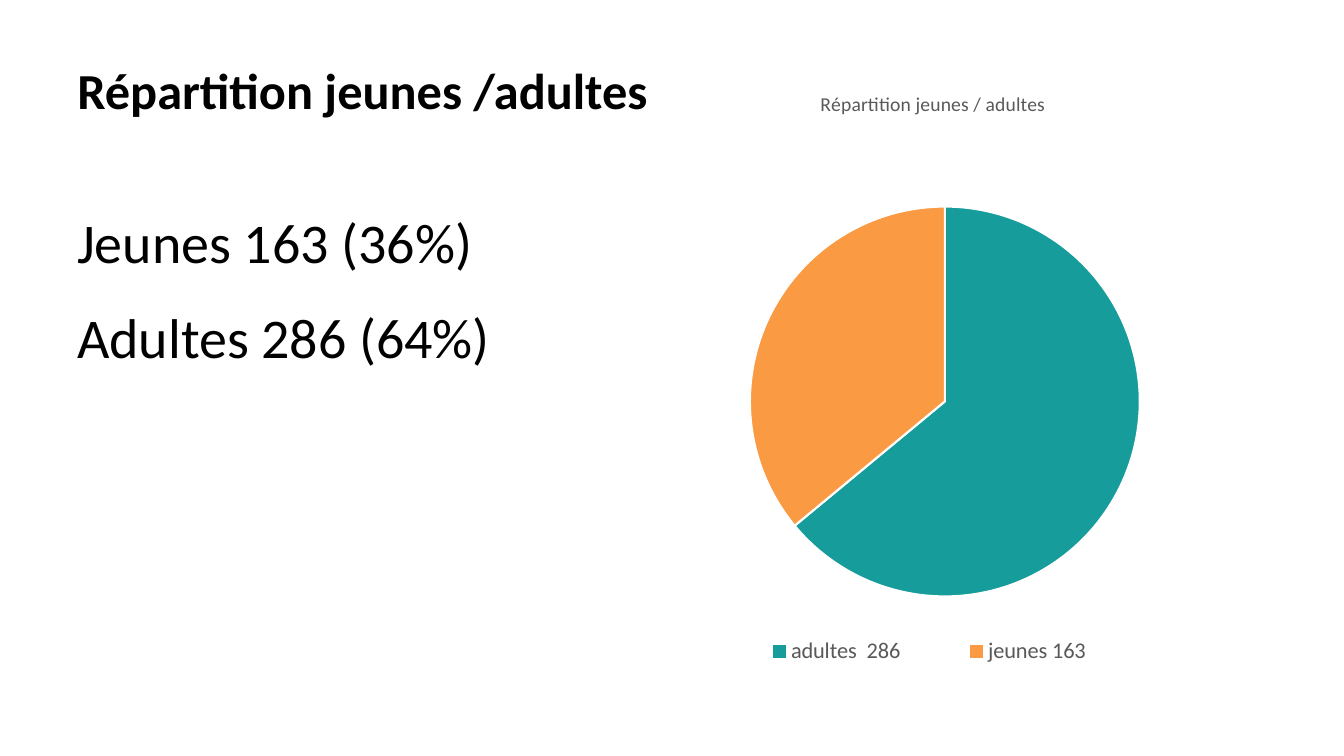
import pptx
import pptx.chart.data
import pptx.dml.color
import pptx.enum.chart
import pptx.enum.text
import pptx.oxml
import pptx.oxml.ns
import pptx.util

Pt = pptx.util.Pt

HEADING = "Répartition jeunes /adultes"
COUNTS = ["Jeunes 163 (36%)", "Adultes 286 (64%)"]
PIE_TITLE = "Répartition jeunes / adultes"
SLICES = [("adultes  286", 64, "adults"), ("jeunes 163", 36, "youths")]

COLOURS = {"text": "000000", "label": "595959", "edge": "FFFFFF",
           "adults": "169C9A", "youths": "FA9A42"}
SLIDE_SIZE = (960, 540)
LEFT, TOP, WIDTH = 48, 43.2, 838.8
HEADING_BOX = (LEFT, TOP, WIDTH, 89.3)
COUNTS_BOX = (LEFT, 135.4, WIDTH, 361.4)
PIE_BOX = (440.6, TOP, 446.4, 474.5)
# Fractions of the chart area: x, y, width, height
PLOT_LAYOUT = {"x": 0.109, "y": 0.22, "w": 0.832, "h": 0.587}
LEGEND_LAYOUT = {"x": 0.15, "y": 0.86, "w": 0.7, "h": 0.06}
TITLE_LAYOUT = {"x": 0.32, "y": 0.04}

HEADING_FONT = {"size": Pt(36), "bold": True}
COUNTS_FONT = {"size": Pt(40), "bold": False}
PIE_TITLE_FONT = {"size": Pt(14), "bold": False}
LEGEND_FONT = {"size": Pt(16), "bold": False}


def rgb(name):
    return pptx.dml.color.RGBColor.from_string(COLOURS[name])


def style_font(font, values, colour):
    for key, value in {"name": "Calibri", **values}.items():
        setattr(font, key, value)
    font.color.rgb = rgb(colour)


def place(shape, box):
    for key, value in zip(("left", "top", "width", "height"), box):
        setattr(shape, key, Pt(value))


def fill_text(frame, lines, font, spacing, before=0):
    frame.word_wrap = True
    frame.auto_size = pptx.enum.text.MSO_AUTO_SIZE.NONE
    frame.vertical_anchor = pptx.enum.text.MSO_ANCHOR.TOP
    frame.text = "\n".join(lines)
    for index, paragraph in enumerate(frame.paragraphs):
        paragraph.alignment = pptx.enum.text.PP_ALIGN.LEFT
        paragraph.line_spacing = spacing
        paragraph.space_before = Pt(before if index else 0)
        style_font(paragraph.font, font, "text")


def set_layout(parent, fractions, followers, inner=False):
    """Fix a chart part's place, putting c:layout before the follower tags."""
    for old in parent.findall(pptx.oxml.ns.qn("c:layout")):
        parent.remove(old)
    target = '<c:layoutTarget val="inner"/>' if inner else ""
    modes = "".join(f'<c:{key}Mode val="edge"/>' for key in ("x", "y"))
    sizes = "".join(f'<c:{key} val="{value}"/>' for key, value in fractions.items())
    layout = pptx.oxml.parse_xml(
        f'<c:layout {pptx.oxml.ns.nsdecls("c")}><c:manualLayout>'
        f'{target}{modes}{sizes}</c:manualLayout></c:layout>')
    tags = [pptx.oxml.ns.qn(tag) for tag in followers]
    follower = next(child for child in parent if child.tag in tags)
    follower.addprevious(layout)


def add_pie(slide):
    data = pptx.chart.data.CategoryChartData()
    data.categories = [label for label, _, _ in SLICES]
    data.add_series("Series 1", [share for _, share, _ in SLICES])
    chart = slide.shapes.add_chart(
        pptx.enum.chart.XL_CHART_TYPE.PIE, *map(Pt, PIE_BOX), data).chart
    style_font(chart.font, {"size": Pt(10)}, "text")

    plot = chart.plots[0]
    plot.vary_by_categories = True
    for index, (_, _, colour) in enumerate(SLICES):
        form = plot.series[0].points[index].format
        form.fill.solid()
        form.fill.fore_color.rgb = rgb(colour)
        form.line.color.rgb = rgb("edge")
        form.line.width = Pt(1.5)

    chart.has_title = True
    title = chart.chart_title
    title.include_in_layout = False
    title.text_frame.text = PIE_TITLE
    style_font(title.text_frame.paragraphs[0].runs[0].font, PIE_TITLE_FONT, "label")

    chart.has_legend = True
    legend = chart.legend
    legend.position = pptx.enum.chart.XL_LEGEND_POSITION.BOTTOM
    legend.include_in_layout = False
    style_font(legend.font, LEGEND_FONT, "label")

    plot_area = chart.element.find(".//" + pptx.oxml.ns.qn("c:plotArea"))
    set_layout(plot_area, PLOT_LAYOUT, ["c:pieChart"], inner=True)
    set_layout(title.element if hasattr(title, "element") else title._element,
               TITLE_LAYOUT, ["c:overlay"])
    set_layout(legend._element, LEGEND_LAYOUT, ["c:overlay"])


def main():
    deck = pptx.Presentation()
    deck.slide_width, deck.slide_height = map(Pt, SLIDE_SIZE)
    slide = deck.slides.add_slide(deck.slide_layouts[5])

    heading = slide.shapes.title
    place(heading, HEADING_BOX)
    fill_text(heading.text_frame, [HEADING], HEADING_FONT, 0.9)

    counts = slide.shapes.add_textbox(*map(Pt, COUNTS_BOX))
    fill_text(counts.text_frame, COUNTS, COUNTS_FONT, 1.2, before=10)

    add_pie(slide)
    deck.save("out.pptx")


if __name__ == "__main__":
    main()
